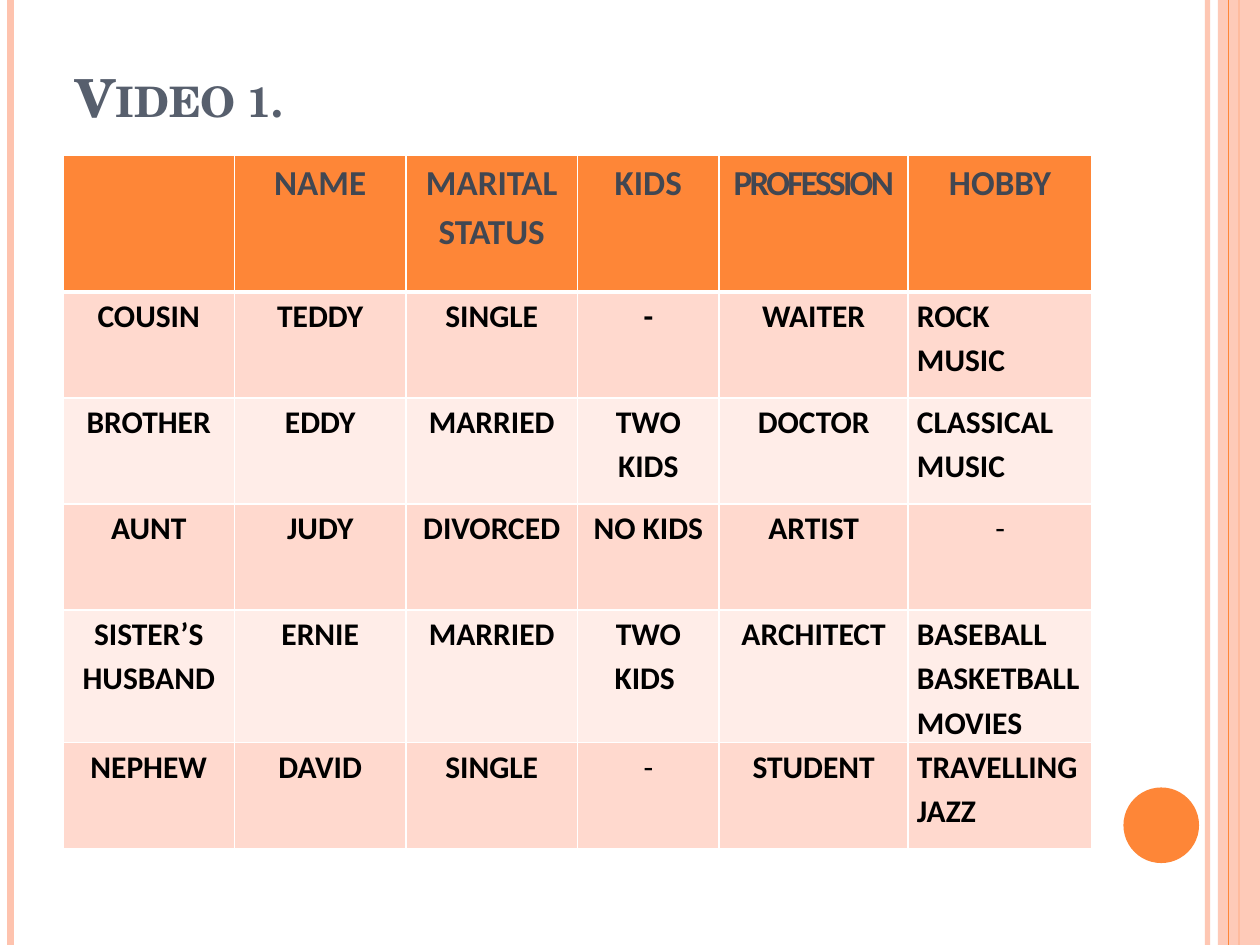
import lxml.etree
import pptx
import pptx.dml.color
import pptx.enum.shapes
import pptx.enum.text
import pptx.oxml.ns
import pptx.util

qn = pptx.oxml.ns.qn
ALIGN = pptx.enum.text.PP_ALIGN
UNIT = pptx.util.Inches(1) / 12  # the slide is a grid of 120 columns by 90 rows
COLUMNS, ROWS = 120, 90

ORANGE, PEACH, WHITE = "FE8637", "FEC3AE", "FFFFFF"
BANDS = ("FFD9CE", "FFEDE8")
SLATE, DARK_SLATE, BLACK = "575F6D", "414752", "000000"

COLUMN_WIDTHS = [49 / 3] * 3 + [13.5, 18, 17.5]
ROW_HEIGHTS = [13] + [10.1] * 5
HEADINGS = ["", "NAME", "MARITAL STATUS", "KIDS", "PROFESSION", "HOBBY"]
PEOPLE = [
    ["COUSIN", "TEDDY", "SINGLE", "-", "WAITER", "ROCK MUSIC"],
    ["BROTHER", "EDDY", "MARRIED", "TWO KIDS", "DOCTOR", "CLASSICAL MUSIC"],
    ["AUNT", "JUDY", "DIVORCED", "NO KIDS", "ARTIST", "-"],
    ["SISTER’S HUSBAND", "ERNIE", "MARRIED", "TWO KIDS ", "ARCHITECT",
     "BASEBALL\nBASKETBALL\nMOVIES"],
    ["NEPHEW", "DAVID", "SINGLE", "-", "STUDENT", "TRAVELLING\nJAZZ"],
]
LIGHT_DASHES = {(3, 5), (5, 3)}  # cells whose dash is not bold


def grid(count):
    return pptx.util.Emu(round(count * UNIT))


def rgb(colour):
    return pptx.dml.color.RGBColor.from_string(colour)


def set_opacity(fill_owner, percent):
    for colour in fill_owner.iter(qn("a:srgbClr")):
        lxml.etree.SubElement(colour, qn("a:alpha"), val=str(percent * 1000))


class SlideBuilder:
    title_font = "TeX Gyre Schola"
    body_font = "Calibri"

    def __init__(self, presentation):
        self.slide = presentation.slides.add_slide(presentation.slide_layouts[5])

    def add_run(self, paragraph, text, font_name, size, colour, bold=True):
        run = paragraph.add_run()
        run.text = text
        run.font.name = font_name
        run.font.size = pptx.util.Pt(size)
        run.font.bold = bold
        run.font.color.rgb = rgb(colour)
        return run

    def stripe(self, column, colour, width, opacity=100):
        """Draw a line down the whole height of the slide."""
        line = self.slide.shapes.add_connector(
            pptx.enum.shapes.MSO_CONNECTOR.STRAIGHT,
            grid(column), 0, grid(column), grid(ROWS))
        line.line.color.rgb = rgb(colour)
        line.line.width = pptx.util.Pt(width)
        properties = line._element.spPr
        if opacity < 100:
            set_opacity(properties, opacity)
        lxml.etree.SubElement(properties, qn("a:effectLst"))

    def shape(self, kind, left, top, width, height, colour, opacity=100):
        shape = self.slide.shapes.add_shape(
            kind, grid(left), grid(top), grid(width), grid(height))
        shape.shadow.inherit = False
        shape.fill.solid()
        shape.fill.fore_color.rgb = rgb(colour)
        shape.line.fill.background()
        if opacity < 100:
            set_opacity(shape._element.spPr, opacity)

    def title(self, text, left, top, width, height):
        title = self.slide.shapes.title
        title.left, title.top = grid(left), grid(top)
        title.width, title.height = grid(width), grid(height)
        frame = title.text_frame
        frame.word_wrap = True
        frame.auto_size = pptx.enum.text.MSO_AUTO_SIZE.NONE
        frame.vertical_anchor = pptx.enum.text.MSO_ANCHOR.BOTTOM
        paragraph = frame.paragraphs[0]
        paragraph.alignment = ALIGN.LEFT
        run = self.add_run(paragraph, text, self.title_font, 30, SLATE)
        run._r.get_or_add_rPr().set("cap", "small")

    def borders(self, cell, top, bottom):
        """Give a cell white borders; top and bottom are widths in points."""
        properties = cell._tc.get_or_add_tcPr()
        widths = {"a:lnL": 1, "a:lnR": 1, "a:lnT": top, "a:lnB": bottom}
        for index, (tag, width) in enumerate(widths.items()):
            line = lxml.etree.Element(qn(tag), w=str(pptx.util.Pt(width)))
            fill = lxml.etree.SubElement(line, qn("a:solidFill"))
            lxml.etree.SubElement(fill, qn("a:srgbClr"), val=WHITE)
            properties.insert(index, line)

    def cell(self, cell, text, fill, size, colour, alignment, bold=True):
        cell.fill.solid()
        cell.fill.fore_color.rgb = rgb(fill)
        cell.margin_left = cell.margin_right = pptx.util.Inches(0.07)
        cell.margin_top = cell.margin_bottom = 0
        frame = cell.text_frame
        for index, line in enumerate(text.split("\n") if text else []):
            paragraph = frame.add_paragraph() if index else frame.paragraphs[0]
            paragraph.alignment = alignment
            paragraph.line_spacing = 1.15
            run = self.add_run(paragraph, line, self.body_font, size, colour, bold)
            if line == "PROFESSION":
                run._r.get_or_add_rPr().set("spc", "-150")

    def table(self, left, top):
        table = self.slide.shapes.add_table(
            len(ROW_HEIGHTS), len(COLUMN_WIDTHS), grid(left), grid(top),
            grid(sum(COLUMN_WIDTHS)), grid(sum(ROW_HEIGHTS))).table
        table.first_row = table.horz_banding = False
        for column, width in zip(table.columns, COLUMN_WIDTHS):
            column.width = grid(width)
        for row, height in zip(table.rows, ROW_HEIGHTS):
            row.height = grid(height)
        for row, texts in enumerate([HEADINGS] + PEOPLE):
            for column, text in enumerate(texts):
                cell = table.cell(row, column)
                if row == 0:
                    self.cell(cell, text, ORANGE, 20, DARK_SLATE, ALIGN.CENTER)
                else:
                    is_hobby = column == len(texts) - 1 and text != "-"
                    self.cell(cell, text, BANDS[(row - 1) % 2], 18, BLACK,
                              ALIGN.LEFT if is_hobby else ALIGN.CENTER,
                              (row, column) not in LIGHT_DASHES)
                self.borders(cell, 3 if row == 1 else 1, 3 if row == 0 else 1)


def main():
    presentation = pptx.Presentation()
    presentation.slide_width = grid(COLUMNS)
    presentation.slide_height = grid(ROWS)
    shapes = pptx.enum.shapes.MSO_SHAPE
    builder = SlideBuilder(presentation)
    builder.stripe(115, PEACH, 3, opacity=93)
    builder.stripe(1, PEACH, 4.5)
    builder.stripe(118, ORANGE, 1.5)
    builder.shape(shapes.RECTANGLE, 116, 0, 4, ROWS, PEACH, opacity=87)
    builder.stripe(117, ORANGE, 0.75)
    builder.shape(shapes.OVAL, 107, 75, 7.2, 7.2, ORANGE)
    builder.title("Video 1.", 6, 3.6, 98, 9.24)
    builder.table(6, 14.8)
    presentation.save("out.pptx")


if __name__ == "__main__":
    main()
